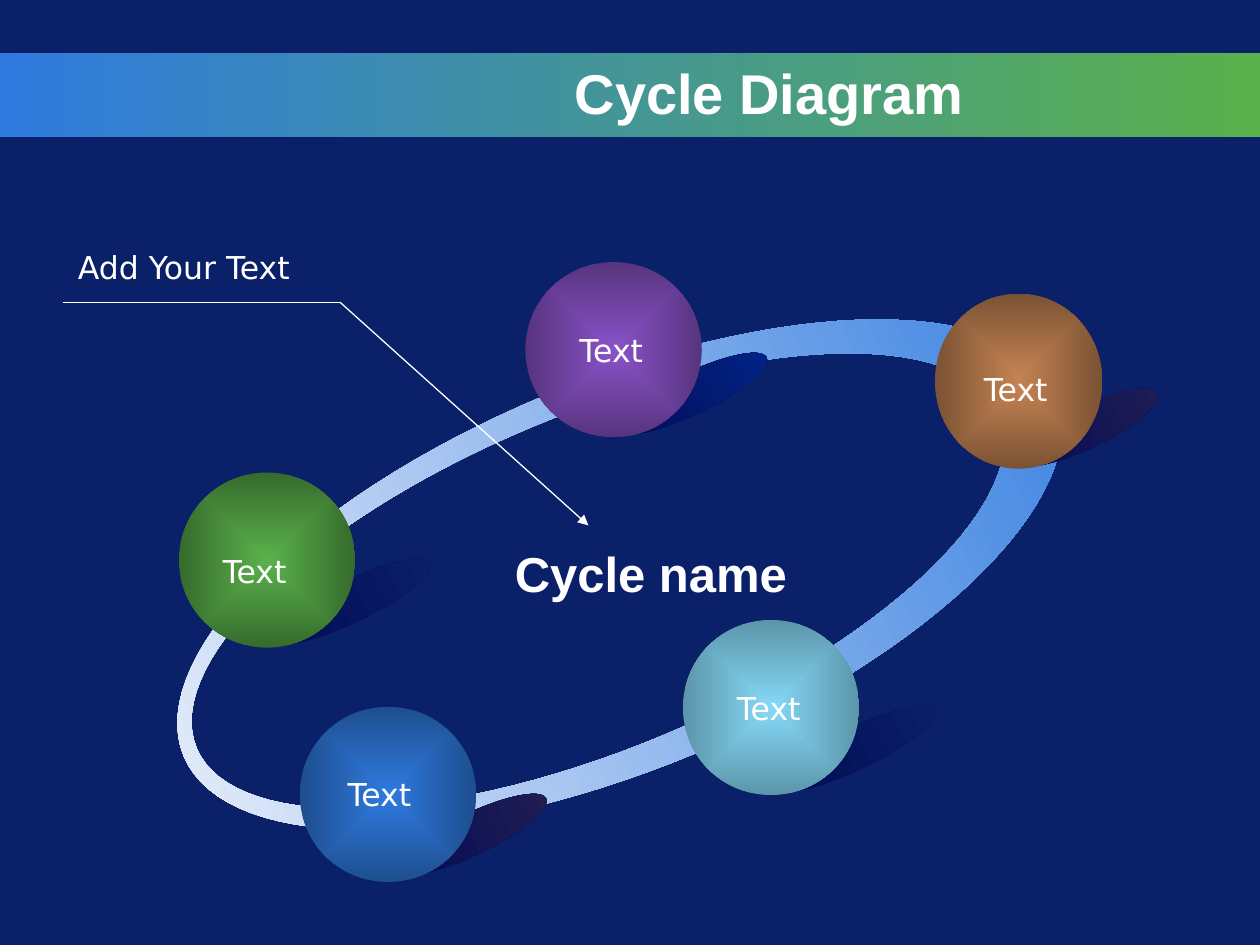
import math

from lxml import etree
from pptx import Presentation
from pptx.dml.color import RGBColor
from pptx.enum import shapes, text
from pptx.oxml import ns
from pptx.util import Inches, Pt

COLORS = {
    "navy": "0A2068", "white": "FFFFFF", "black": "000000",
    "blue": "2F7ADF", "green": "5AB14B", "ice": "F4F6FC",
    "shade": "020A53", "royal": "022589", "plum": "211E54",
}
RING_CENTER = (4.92, 4.56)
RING_TILT = -22.6
SHADE_TILT = -25.7
BALL_HEIGHT = 1.39

# left, top, width, centre colour, edge colour, label left, label top
BALLS = [
    (4.17, 2.08, 1.4, "8A52C8", "57347E", 4.5, 2.58),
    (1.42, 3.75, 1.4, "5AB14B", "366B2D", 1.67, 4.33),
    (2.38, 5.61, 1.4, "2F7ADF", "1E4E8E", 2.66, 6.1),
    (5.42, 4.92, 1.4, "85D9F7", "5C95AA", 5.75, 5.42),
    (7.42, 2.33, 1.33, "C48352", "7B5234", 7.71, 2.89),
]
# left, top, width, far colour
SHADES = [
    (4.82, 2.96, 1.33, "royal"),
    (7.99, 3.23, 1.25, "plum"),
    (3.07, 6.46, 1.33, "plum"),
    (6.07, 5.78, 1.42, "navy"),
    (2.07, 4.61, 1.42, "navy"),
]


def rgb(value):
    return RGBColor.from_string(COLORS.get(value, value))


def sub(parent, tag, **attributes):
    return etree.SubElement(parent, ns.qn(tag), attributes)


def paint(shape, start, end, from_center=False):
    """Fill with a two-colour gradient, without outline or shadow."""
    shape.shadow.inherit = False
    shape.line.fill.background()
    shape.fill.gradient()
    shape.fill.gradient_angle = 0
    for stop, color in zip(shape.fill.gradient_stops, (start, end)):
        stop.color.rgb = rgb(color)
    if from_center:
        linear = shape._element.spPr.find(".//" + ns.qn("a:lin"))
        gradient = linear.getparent()
        gradient.remove(linear)
        focus = sub(gradient, "a:path", path="rect")
        sub(focus, "a:fillToRect", l="50000", t="50000", r="50000", b="50000")


def add_preset(page, kind, left, top, width, height):
    return page.shapes.add_shape(kind, Inches(left), Inches(top),
                                 Inches(width), Inches(height))


def ellipse_points(center, radii, direction=1, steps=120):
    angles = [direction * 2 * math.pi * step / steps for step in range(steps)]
    return [(Inches(center[0] + radii[0] * math.cos(angle)),
             Inches(center[1] + radii[1] * math.sin(angle))) for angle in angles]


def add_ring(page):
    """Tilted band between two ellipses, thicker on the right."""
    x, y = RING_CENTER
    outer = ellipse_points((x, y), (3.75, 1.54))
    inner = ellipse_points((x - 0.18, y - 0.02), (3.45, 1.33), direction=-1)
    builder = page.shapes.build_freeform(*outer[0])
    builder.add_line_segments(outer[1:], close=True)
    builder.move_to(*inner[0])
    builder.add_line_segments(inner[1:], close=True)
    ring = builder.convert_to_shape()
    ring.rotation = RING_TILT
    paint(ring, "ice", "blue")


def add_text(page, words, left, top, width, height, size=18, font="DejaVu Sans",
             bold=False, align=text.PP_ALIGN.LEFT, wrap=False):
    box = page.shapes.add_textbox(Inches(left), Inches(top),
                                  Inches(width), Inches(height))
    frame = box.text_frame
    frame.word_wrap = wrap
    frame.vertical_anchor = text.MSO_ANCHOR.MIDDLE
    para = frame.paragraphs[0]
    para.alignment = align
    span = para.add_run()
    span.text = words
    span.font.size = Pt(size)
    span.font.name = font
    span.font.bold = bold
    span.font.color.rgb = rgb("white")
    return span


def add_text_shadow(span):
    properties = span.font._element
    effects = etree.Element(ns.qn("a:effectLst"))
    shadow = sub(effects, "a:outerShdw", dist="35921", dir="2700000")
    sub(shadow, "a:srgbClr", val=COLORS["black"])
    properties.find(ns.qn("a:solidFill")).addnext(effects)


def add_line(page, start, end, arrow=False):
    line = page.shapes.add_connector(shapes.MSO_CONNECTOR.STRAIGHT,
                                     *map(Inches, start + end))
    line.line.color.rgb = rgb("white")
    line.line.width = Pt(0.75)
    if arrow:
        sub(line.line._get_or_add_ln(), "a:tailEnd", type="triangle")
    sub(line._element.spPr, "a:effectLst")


def main():
    deck = Presentation()
    deck.slide_width, deck.slide_height = Inches(10), Inches(7.5)
    page = deck.slides.add_slide(deck.slide_layouts[6])
    page.background.fill.solid()
    page.background.fill.fore_color.rgb = rgb("navy")

    band = add_preset(page, shapes.MSO_SHAPE.RECTANGLE, 0, 0.42, 10, 0.67)
    paint(band, "blue", "green")
    add_text(page, "Cycle Diagram", 0.5, 0.42, 7.25, 0.62, size=32, font="Arial",
             bold=True, align=text.PP_ALIGN.RIGHT, wrap=True)

    add_ring(page)
    for left, top, width, color in SHADES:
        shade = add_preset(page, shapes.MSO_SHAPE.OVAL, left, top, width, 0.33)
        shade.rotation = SHADE_TILT
        paint(shade, "shade", color)
    for left, top, width, center, edge, _, _ in BALLS:
        ball = add_preset(page, shapes.MSO_SHAPE.OVAL, left, top, width, BALL_HEIGHT)
        paint(ball, center, edge, from_center=True)
    for *_, label_left, label_top in BALLS:
        add_text(page, "Text", label_left, label_top, 0.75, 0.4)

    name = add_text(page, "Cycle name", 3.75, 4.26, 2.83, 0.57, size=28, font="Arial",
                    bold=True, align=text.PP_ALIGN.CENTER, wrap=True)
    add_text_shadow(name)

    bend = (2.7, 2.4)
    add_line(page, bend, (4.67, 4.17), arrow=True)
    add_line(page, bend, (0.5, 2.4))
    add_text(page, "Add Your Text", 0.52, 1.92, 1.98, 0.4)

    deck.save("out.pptx")


if __name__ == "__main__":
    main()
